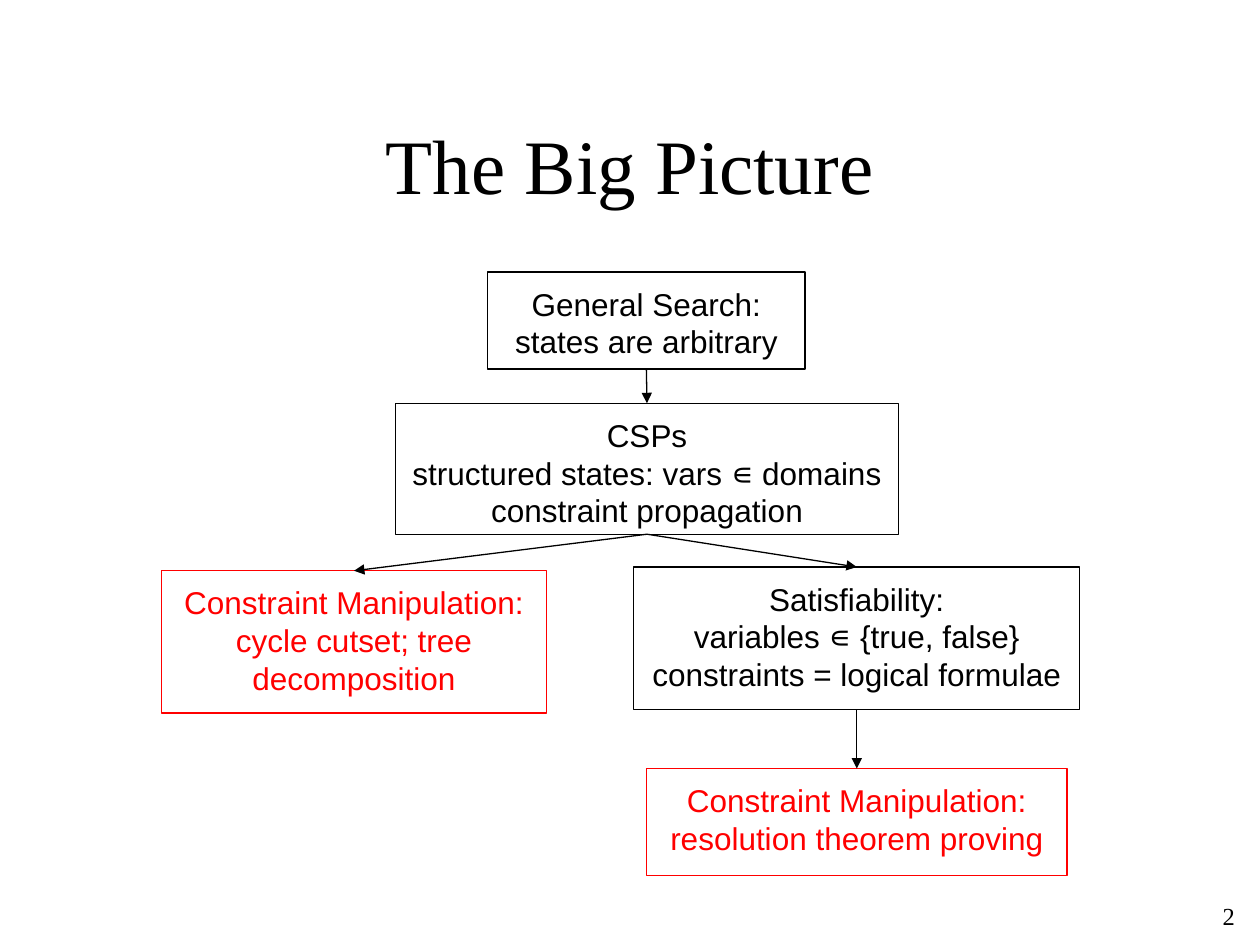
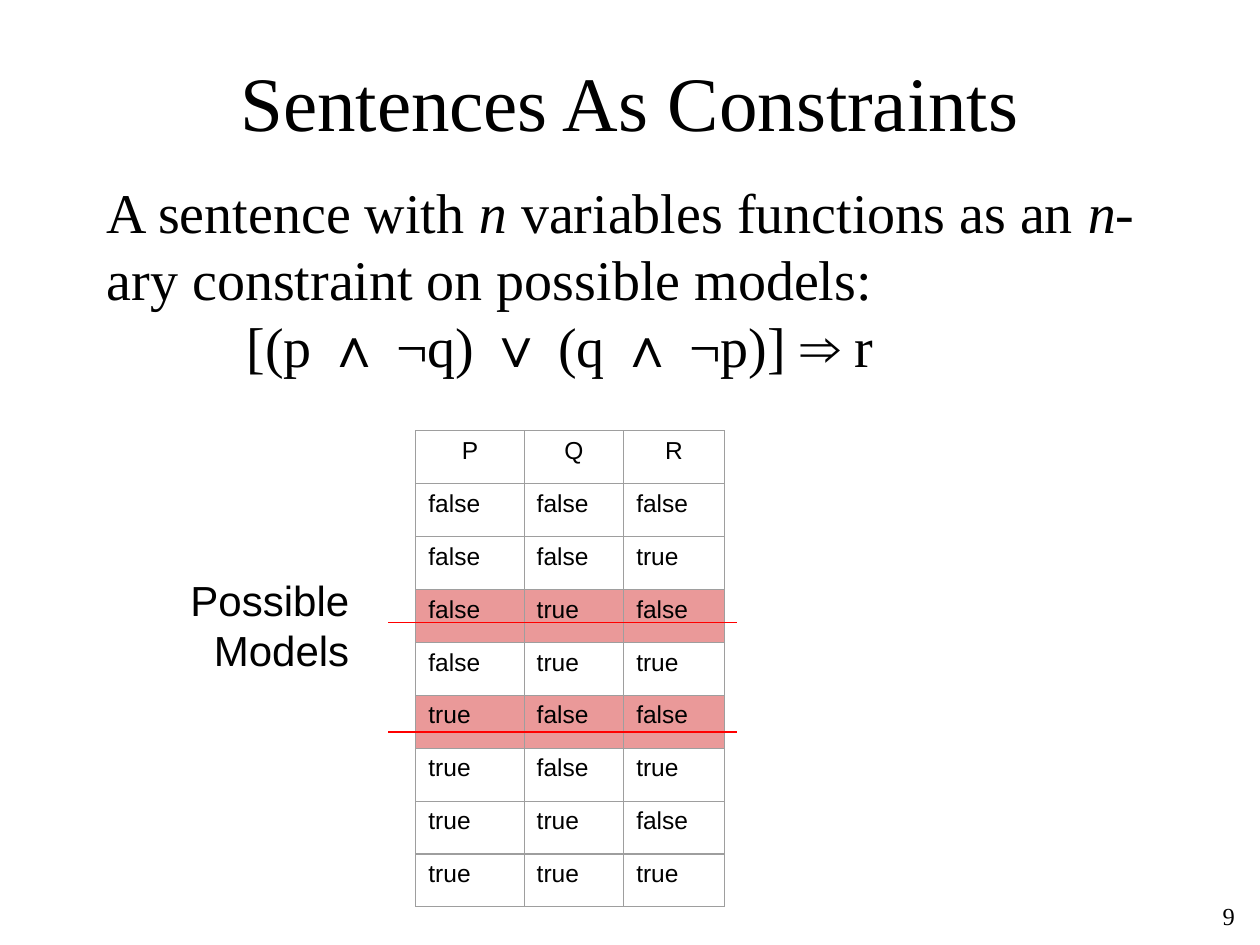
import itertools

import pptx
import pptx.dml.color
import pptx.enum.shapes
import pptx.enum.text
import pptx.oxml
import pptx.oxml.ns
import pptx.util
from pptx.util import Inches

ALIGN = pptx.enum.text.PP_ALIGN
ANCHOR = pptx.enum.text.MSO_ANCHOR
TOP, BOTTOM = 0, 2


def color(value):
    return pptx.dml.color.RGBColor.from_string(value)


def element(markup):
    head, rest = markup.split(" ", 1)
    return pptx.oxml.parse_xml(f"{head} {pptx.oxml.ns.nsdecls('a')} {rest}")


class Slides:
    serif = "Times New Roman"
    sans = "Arial"
    black = "000000"
    red = "FF0000"
    struck = "EA9999"
    grid = "9E9E9E"
    thin = 0.75

    def __init__(self):
        self.deck = pptx.Presentation()
        self.deck.slide_width = Inches(10)
        self.deck.slide_height = Inches(7.5)
        self.page = None

    def start(self, title, title_top, number):
        self.page = self.deck.slides.add_slide(self.deck.slide_layouts[6])
        box = self.text(0.75, title_top, 8.5, 1.25, title, 44, self.serif, ALIGN.CENTER, 0.05)
        box.text_frame.vertical_anchor = ANCHOR.MIDDLE
        self.text(7.82, 7.1, 2.08, 0.32, str(number), 14, self.serif, ALIGN.RIGHT, 0.05)

    def frame(self, text_frame, inset):
        text_frame.word_wrap = True
        text_frame.vertical_anchor = ANCHOR.TOP
        text_frame.margin_left = text_frame.margin_right = Inches(0.1)
        text_frame.margin_top = text_frame.margin_bottom = Inches(inset)

    def style(self, text_frame, size, font, align, ink):
        for para in text_frame.paragraphs:
            para.alignment = align
            for span in para.runs:
                span.font.size = pptx.util.Pt(size)
                span.font.name = font
                span.font.color.rgb = color(ink)

    def text(self, left, top, width, height, words, size, font, align, inset=0.1):
        box = self.page.shapes.add_textbox(Inches(left), Inches(top), Inches(width), Inches(height))
        self.frame(box.text_frame, inset)
        box.text_frame.text = words
        self.style(box.text_frame, size, font, align, self.black)
        return box

    def sentence(self, left, top, width, height, spans, formula, indent):
        box = self.text(left, top, width, height, "", 32, self.serif, ALIGN.LEFT, 0.05)
        para = box.text_frame.paragraphs[0]
        para.space_before = pptx.util.Pt(6.4)
        for words, italic in spans:
            span = para.add_run()
            span.text = words
            span.font.italic = italic
        para = box.text_frame.add_paragraph()
        para.text = formula
        para._p.get_or_add_pPr().set("marL", str(Inches(indent)))
        self.style(box.text_frame, 32, self.serif, ALIGN.LEFT, self.black)

    def node(self, left, top, width, height, words, ink=black):
        box = self.page.shapes.add_shape(
            pptx.enum.shapes.MSO_SHAPE.RECTANGLE,
            Inches(left), Inches(top), Inches(width), Inches(height))
        box.shadow.inherit = False
        box.fill.background()
        box.line.color.rgb = color(ink)
        box.line.width = pptx.util.Pt(self.thin)
        self.frame(box.text_frame, 0.1)
        box.text_frame.text = words
        self.style(box.text_frame, 18, self.sans, ALIGN.CENTER, ink)
        return box

    def line(self, left, top, right, bottom, ink):
        line = self.page.shapes.add_connector(
            pptx.enum.shapes.MSO_CONNECTOR.STRAIGHT,
            Inches(left), Inches(top), Inches(right), Inches(bottom))
        line.line.color.rgb = color(ink)
        line.line.width = pptx.util.Pt(self.thin)
        line._element.spPr.append(element("<a:effectLst />"))
        return line

    def arrow(self, parent, child):
        arrow = self.line(0, 0, 0, 0, self.black)
        arrow.begin_connect(parent, BOTTOM)
        arrow.end_connect(child, TOP)
        arrow.line._get_or_add_ln().append(element('<a:tailEnd type="triangle"/>'))

    def borders(self, cell):
        properties = cell._tc.get_or_add_tcPr()
        for place, side in enumerate(("lnL", "lnR", "lnT", "lnB")):
            properties.insert(place, element(
                f'<a:{side} w="{pptx.util.Pt(self.thin)}"><a:solidFill>'
                f'<a:srgbClr val="{self.grid}"/></a:solidFill></a:{side}>'))

    def table(self, left, top, widths, row_height, rows, struck_rows):
        table = self.page.shapes.add_table(
            len(rows), len(widths), Inches(left), Inches(top),
            Inches(sum(widths)), Inches(row_height * len(rows))).table
        table.first_row = table.horz_banding = False
        for column, width in zip(table.columns, widths):
            column.width = Inches(width)
        for index, values in enumerate(rows):
            table.rows[index].height = Inches(row_height)
            for cell, value in zip(table.rows[index].cells, values):
                cell.text = value
                self.frame(cell.text_frame, 0.1)
                align = ALIGN.LEFT if index else ALIGN.CENTER
                self.style(cell.text_frame, 14, self.sans, align, self.black)
                if index in struck_rows:
                    cell.fill.solid()
                    cell.fill.fore_color.rgb = color(self.struck)
                else:
                    cell.fill.background()
                self.borders(cell)


def big_picture(slides):
    slides.start("The Big Picture", 0.67, 2)
    search = slides.node(3.87, 2.16, 2.52, 0.77, "General Search:\nstates are arbitrary")
    csps = slides.node(
        3.14, 3.2, 3.99, 1.04,
        "CSPs\nstructured states: vars ∊ domains\nconstraint propagation")
    decomposition = slides.node(
        1.28, 4.53, 3.06, 1.13,
        "Constraint Manipulation:\ncycle cutset; tree decomposition", slides.red)
    satisfiability = slides.node(
        5.03, 4.5, 3.54, 1.13,
        "Satisfiability:\nvariables ∊ {true, false}\nconstraints = logical formulae")
    resolution = slides.node(
        5.13, 6.1, 3.34, 0.85,
        "Constraint Manipulation:\nresolution theorem proving", slides.red)
    for parent, child in ((search, csps), (csps, decomposition),
                          (csps, satisfiability), (satisfiability, resolution)):
        slides.arrow(parent, child)


def sentences_as_constraints(slides):
    slides.start("Sentences As Constraints", 0.17, 9)
    slides.sentence(
        0.75, 1.36, 8.5, 5.3,
        (("A sentence with ", False), ("n", True), (" variables functions as an ", False),
         ("n", True), ("-ary constraint on possible models:", False)),
        "[(p ∧ ¬q) ∨ (q ∧ ¬p)] ⇒ r", 1.11)
    models = list(itertools.product(("false", "true"), repeat=3))
    violating = [row for row, (p, q, r) in enumerate(models, 1) if p != q and r == "false"]
    slides.table(3.3, 3.42, (0.86, 0.79, 0.8), 0.42, [("P", "Q", "R")] + models, violating)
    for height in (4.94, 5.81):
        slides.line(3.08, height, 5.85, height, slides.red)
    slides.text(1.3, 4.46, 1.57, 1.49, "Possible\nModels", 24, slides.sans, ALIGN.RIGHT)


def main():
    slides = Slides()
    big_picture(slides)
    sentences_as_constraints(slides)
    slides.deck.save("out.pptx")


if __name__ == "__main__":
    main()
